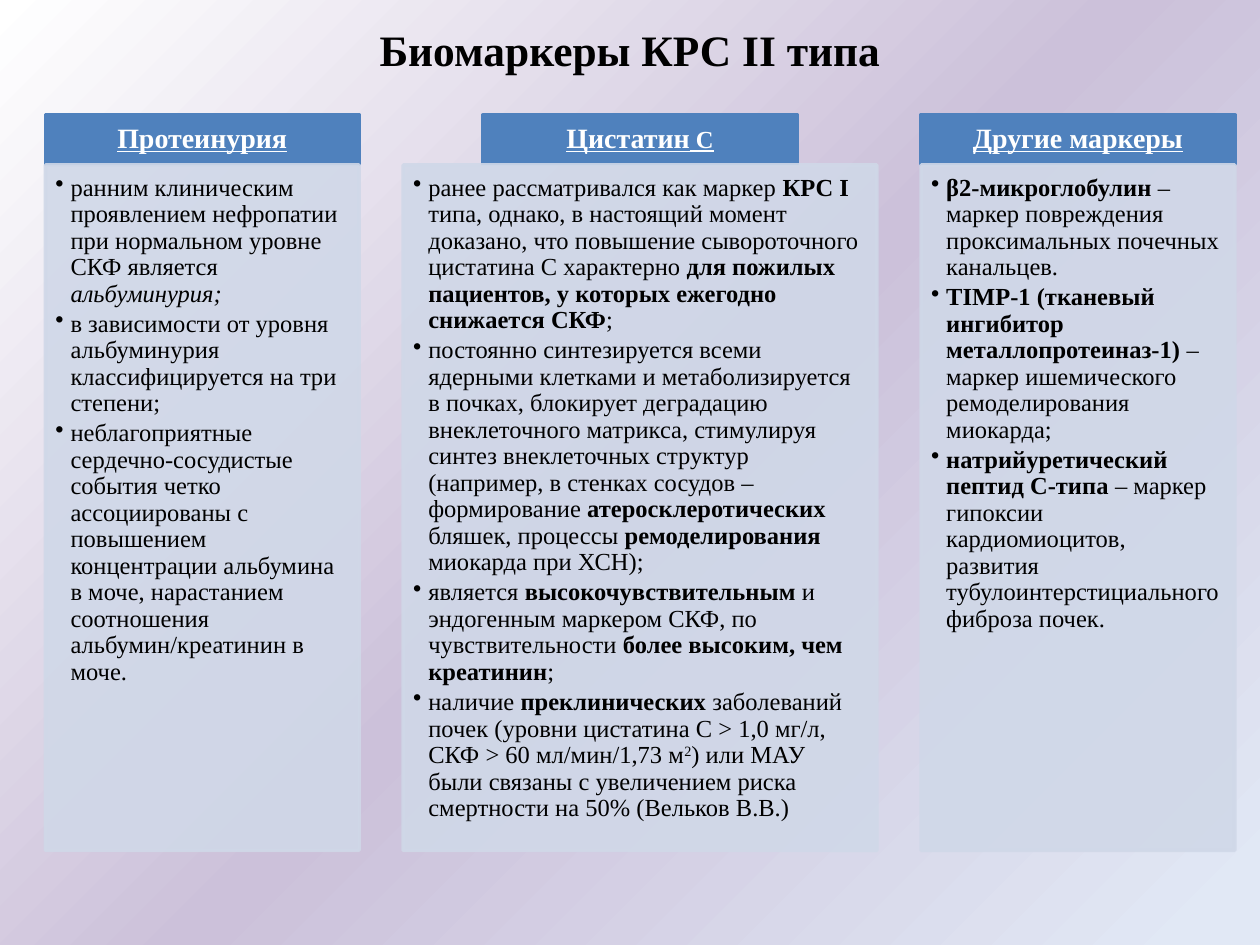
"""Build a slide with three columns of biomarkers for type II cardiorenal syndrome."""
from lxml import etree
from pptx import Presentation
from pptx.dml.color import RGBColor
from pptx.enum.shapes import MSO_SHAPE
from pptx.enum.text import MSO_ANCHOR, MSO_AUTO_SIZE, PP_ALIGN
from pptx.oxml.ns import qn
from pptx.util import Inches, Pt

RECT = MSO_SHAPE.RECTANGLE
TOP, MIDDLE = MSO_ANCHOR.TOP, MSO_ANCHOR.MIDDLE
LEFT, CENTER = PP_ALIGN.LEFT, PP_ALIGN.CENTER
NO_FIT = MSO_AUTO_SIZE.NONE

THEME = {
    "font": "Times New Roman",
    "ink": "000000", "white": "FFFFFF", "head": "4F81BD", "panel": "D0D8E8",
    "stops": [(0, "FFFFFF"), (51, "CCC1DA"), (97, "E1E8F5")],
    "title": 24.8, "label": 16, "body": 14,
}

TITLE = "Биомаркеры КРС II типа"
B, I, SUP = "bold", "italic", "super"
COLUMNS = [
    {"width": 2.49, "head": [("Протеинурия", 16)], "items": [
        ["ранним клиническим проявлением нефропатии при нормальном уровне СКФ является ",
         ("альбуминурия;", I)],
        ["в зависимости от уровня альбуминурия классифицируется на три степени;"],
        ["неблагоприятные сердечно-сосудистые события четко ассоциированы с повышением "
         "концентрации альбумина в моче, нарастанием соотношения альбумин/креатинин в моче."],
    ]},
    {"width": 3.76, "head": [("Цистатин", 16), (" С", 14)], "items": [
        ["ранее рассматривался как маркер ", ("КРС I ", B),
         "типа, однако, в настоящий момент доказано, что повышение сывороточного "
         "цистатина С характерно ",
         ("для пожилых пациентов, у которых ежегодно снижается СКФ", B), ";"],
        ["постоянно синтезируется всеми ядерными клетками и метаболизируется в почках, "
         "блокирует деградацию внеклеточного матрикса, стимулируя синтез внеклеточных "
         "структур (например, в стенках сосудов – формирование ",
         ("атеросклеротических", B), " бляшек, процессы ",
         ("ремоделирования", B), " миокарда при ХСН);"],
        ["является ", ("высокочувствительным ", B),
         "и эндогенным маркером СКФ, по чувствительности ",
         ("более высоким, чем креатинин", B), ";"],
        ["наличие ", ("преклинических", B),
         " заболеваний почек (уровни цистатина С > 1,0 мг/л, СКФ > 60 мл/мин/1,73 м",
         ("2", SUP),
         ") или МАУ были связаны с увеличением риска смертности на 50% (Вельков В.В.)"],
    ]},
    {"width": 2.49, "head": [("Другие маркеры", 16)], "items": [
        [("β2-микроглобулин", B), " – маркер повреждения проксимальных почечных канальцев."],
        [("TIMP-1 (тканевый ингибитор металлопротеиназ-1) ", B),
         "– маркер ишемического ремоделирования миокарда;"],
        [("натрийуретический пептид С-типа ", B),
         "– маркер гипоксии кардиомиоцитов, развития тубулоинтерстициального фиброза почек."],
    ]},
]
START, GAP = 0.36, 0.35
HEAD_W, HEAD_Y, HEAD_H = 2.49, 0.91, 0.39
BODY_Y, BODY_H = 1.31, 5.44


def rgb(name):
    return RGBColor.from_string(THEME[name])


def style(run, size, color="ink"):
    font = run.font
    font.name, font.size = THEME["font"], Pt(size)
    font.color.rgb = rgb(color)
    return font


def add_run(para, text, size, color="ink"):
    run = para.add_run()
    run.text = text
    return style(run, size, color)


def add_box(slide, place, color, insets, anchor):
    box = slide.shapes.add_shape(RECT, *map(Inches, place))
    box.shadow.inherit = False
    box.fill.solid()
    box.fill.fore_color.rgb = box.line.color.rgb = rgb(color)
    box.line.width = Pt(2)
    frame = box.text_frame
    frame.word_wrap, frame.vertical_anchor = True, anchor
    (frame.margin_left, frame.margin_top,
     frame.margin_right, frame.margin_bottom) = map(Inches, insets)
    return box


def add_head(slide, left, parts):
    box = add_box(slide, (left, HEAD_Y, HEAD_W, HEAD_H), "head",
                  (0.12, 0.07, 0.12, 0.07), MIDDLE)
    para = box.text_frame.paragraphs[0]
    para.alignment, para.line_spacing = CENTER, 0.9
    for text, size in parts:
        font = add_run(para, text, size, "white")
        font.bold = font.underline = True


def add_bullet(para):
    props = para._p.get_or_add_pPr()
    props.set("marL", str(Inches(0.12)))
    props.set("indent", str(-Inches(0.12)))
    etree.SubElement(props, qn("a:buChar")).set("char", "•")


def add_body(slide, left, width, items):
    box = add_box(slide, (left, BODY_Y, width, BODY_H), "panel",
                  (0.08, 0.08, 0.11, 0.12), TOP)
    for color in box.element.spPr.iter(qn("a:srgbClr")):
        etree.SubElement(color, qn("a:alpha")).set("val", "90000")
    frame = box.text_frame
    for i, parts in enumerate(items):
        para = frame.add_paragraph() if i else frame.paragraphs[0]
        para.alignment, para.line_spacing, para.space_after = LEFT, 0.9, Pt(2.1)
        add_bullet(para)
        for part in parts:
            text, kind = (part, None) if isinstance(part, str) else part
            font = add_run(para, text, THEME["body"])
            font.bold, font.italic = kind == B, kind == I
            if kind == SUP:
                para.runs[-1].font._element.set("baseline", "30000")


def paint_back(slide):
    fill = slide.background.fill
    fill.gradient()
    fill.gradient_angle = 315
    stops = next(slide.element.iter(qn("a:gsLst")))
    for old in list(stops):
        stops.remove(old)
    for pos, color in THEME["stops"]:
        stop = etree.SubElement(stops, qn("a:gs"), pos=str(pos * 1000))
        etree.SubElement(stop, qn("a:srgbClr"), val=color)


def add_title(slide):
    title = slide.shapes.title
    title.left, title.top, title.width, title.height = map(Inches, (2.48, 0.13, 5.04, 0.44))
    frame = title.text_frame
    frame.text = TITLE
    frame.auto_size, frame.vertical_anchor = NO_FIT, TOP
    para = frame.paragraphs[0]
    para.alignment, para.space_before = CENTER, Pt(3)
    style(para.runs[0], THEME["title"]).bold = True


def main():
    deck = Presentation()
    deck.slide_width, deck.slide_height = Inches(10), Inches(7.5)
    slide = deck.slides.add_slide(deck.slide_layouts[5])
    paint_back(slide)
    add_title(slide)
    left = START
    for col in COLUMNS:
        width = col["width"]
        add_head(slide, left + (width - HEAD_W) / 2, col["head"])
        add_body(slide, left, width, col["items"])
        left += width + GAP
    deck.save("out.pptx")


if __name__ == "__main__":
    main()
